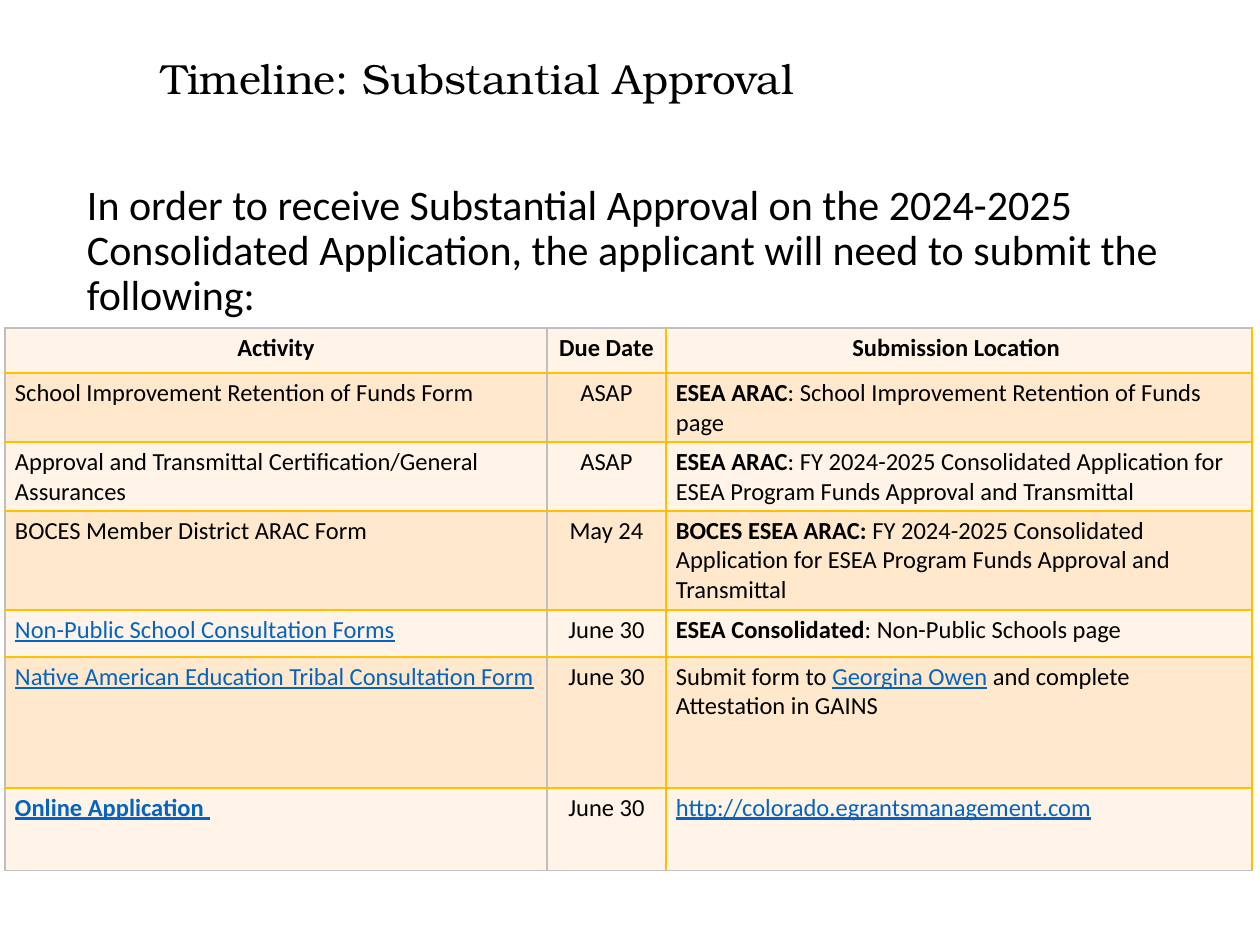
from dataclasses import dataclass

from lxml import etree
from pptx import Presentation
from pptx.dml.color import RGBColor
from pptx.enum.text import MSO_ANCHOR, PP_ALIGN
from pptx.oxml.ns import qn
from pptx.util import Pt

LEFT, CENTER = PP_ALIGN.LEFT, PP_ALIGN.CENTER
TOP = MSO_ANCHOR.TOP
EMU_PER_PX = 914400 / 126
TITLE_ONLY = 5


@dataclass(frozen=True)
class Theme:
    title_font: str = "TeX Gyre Bonum"
    body_font: str = "Calibri"
    heading_size: int = 24
    table_size: int = 14
    ink: str = "000000"
    link: str = "0563C1"
    bands: tuple = ("FFF4E7", "FFE8CC")
    gold: tuple = ("FFC000", 1)
    gray: tuple = ("BFBFBF", 0.75)


THEME = Theme()

COLUMN_WIDTHS = (542, 119, 586)
ROW_HEIGHTS = (45, 69, 69, 99, 47, 131, 83)

# A cell is a list of (text, style) spans; style holds "b" for bold, "l" for link
ROWS = [
    ([("Activity", "b")], [("Due Date", "b")], [("Submission Location ", "b")]),
    ([("School Improvement Retention of Funds Form", "")],
     [("ASAP", "")],
     [("ESEA ARAC", "b"), (": School Improvement Retention of Funds page", "")]),
    ([("Approval and Transmittal Certification/General Assurances", "")],
     [("ASAP", "")],
     [("ESEA ARAC", "b"),
      (": FY 2024-2025 Consolidated Application for ESEA Program Funds "
       "Approval and Transmittal", "")]),
    ([("BOCES Member District ARAC Form", "")],
     [("May 24", "")],
     [("BOCES ESEA ARAC: ", "b"),
      ("FY 2024-2025 Consolidated Application for ESEA Program Funds "
       "Approval and Transmittal", "")]),
    ([("Non-Public School Consultation Forms", "l")],
     [("June 30", "")],
     [("ESEA Consolidated", "b"), (": Non-Public Schools page", "")]),
    ([("Native American Education Tribal Consultation Form", "l")],
     [("June 30", "")],
     [("Submit form to ", ""), ("Georgina Owen", "l"),
      (" and complete Attestation in GAINS", "")]),
    ([("Online Application ", "bl")],
     [("June 30", "")],
     [("http://colorado.egrantsmanagement.com", "l")]),
]


def px(length):
    return round(length * EMU_PER_PX)


def place(shape, left, top, width, height):
    shape.left, shape.top = px(left), px(top)
    shape.width, shape.height = px(width), px(height)


def set_font(font, name, size):
    font.name, font.size = name, Pt(size)
    font.color.rgb = RGBColor.from_string(THEME.ink)


def write_heading(shape, text, font_name):
    frame = shape.text_frame
    frame.word_wrap = True
    frame.vertical_anchor = TOP
    frame.margin_left = frame.margin_top = 0
    frame.margin_right = frame.margin_bottom = 0
    para = frame.paragraphs[0]
    para.text = text
    para.alignment = LEFT
    para.line_spacing = 0.9
    set_font(para.font, font_name, THEME.heading_size)


def set_border(cell, side, line):
    color, width = line
    border = etree.SubElement(cell._tc.get_or_add_tcPr(), qn(f"a:ln{side}"),
                              w=str(Pt(width)))
    fill = etree.SubElement(border, qn("a:solidFill"))
    etree.SubElement(fill, qn("a:srgbClr"), val=color)


def write_cell(cell, spans, alignment):
    cell.margin_left = cell.margin_right = px(10)
    cell.margin_top = cell.margin_bottom = px(5)
    para = cell.text_frame.paragraphs[0]
    para.alignment = alignment
    set_font(para.font, THEME.body_font, THEME.table_size)
    for text, style in spans:
        span = para.add_run()
        span.text = text
        span.font.bold = "b" in style
        if "l" in style:
            span.font.underline = True
            span.font.color.rgb = RGBColor.from_string(THEME.link)


def add_timeline_table(page, left, top):
    table = page.shapes.add_table(
        len(ROWS), len(COLUMN_WIDTHS), px(left), px(top),
        px(sum(COLUMN_WIDTHS)), px(sum(ROW_HEIGHTS))).table
    for column, width in zip(table.columns, COLUMN_WIDTHS):
        column.width = px(width)
    for row, height in zip(table.rows, ROW_HEIGHTS):
        row.height = px(height)

    # Gray edges on the top, bottom and first column; gold elsewhere
    across = [THEME.gray] + [THEME.gold] * (len(ROWS) - 1) + [THEME.gray]
    down = [THEME.gray, THEME.gray, THEME.gold, THEME.gold]
    for r, row in enumerate(ROWS):
        for c, spans in enumerate(row):
            cell = table.cell(r, c)
            write_cell(cell, spans, CENTER if r == 0 or c == 1 else LEFT)
            for side, line in (("L", down[c]), ("R", down[c + 1]),
                               ("T", across[r]), ("B", across[r + 1])):
                set_border(cell, side, line)
            cell.fill.solid()
            cell.fill.fore_color.rgb = RGBColor.from_string(THEME.bands[r % 2])


def main():
    deck = Presentation()
    deck.slide_width, deck.slide_height = px(1260), px(945)
    page = deck.slides.add_slide(deck.slide_layouts[TITLE_ONLY])

    # Title
    title = page.shapes.title
    place(title, 161, 58, 711, 82)
    write_heading(title, "Timeline: Substantial Approval", THEME.title_font)

    # Introduction
    box = page.shapes.add_textbox(0, 0, 0, 0)
    place(box, 87, 184, 1086, 640)
    write_heading(box, "In order to receive Substantial Approval on the 2024-2025 "
                  "Consolidated Application, the applicant will need to submit "
                  "the following: ", THEME.body_font)

    # Activities and due dates
    add_timeline_table(page, 5, 328)
    deck.save("out.pptx")


if __name__ == "__main__":
    main()
